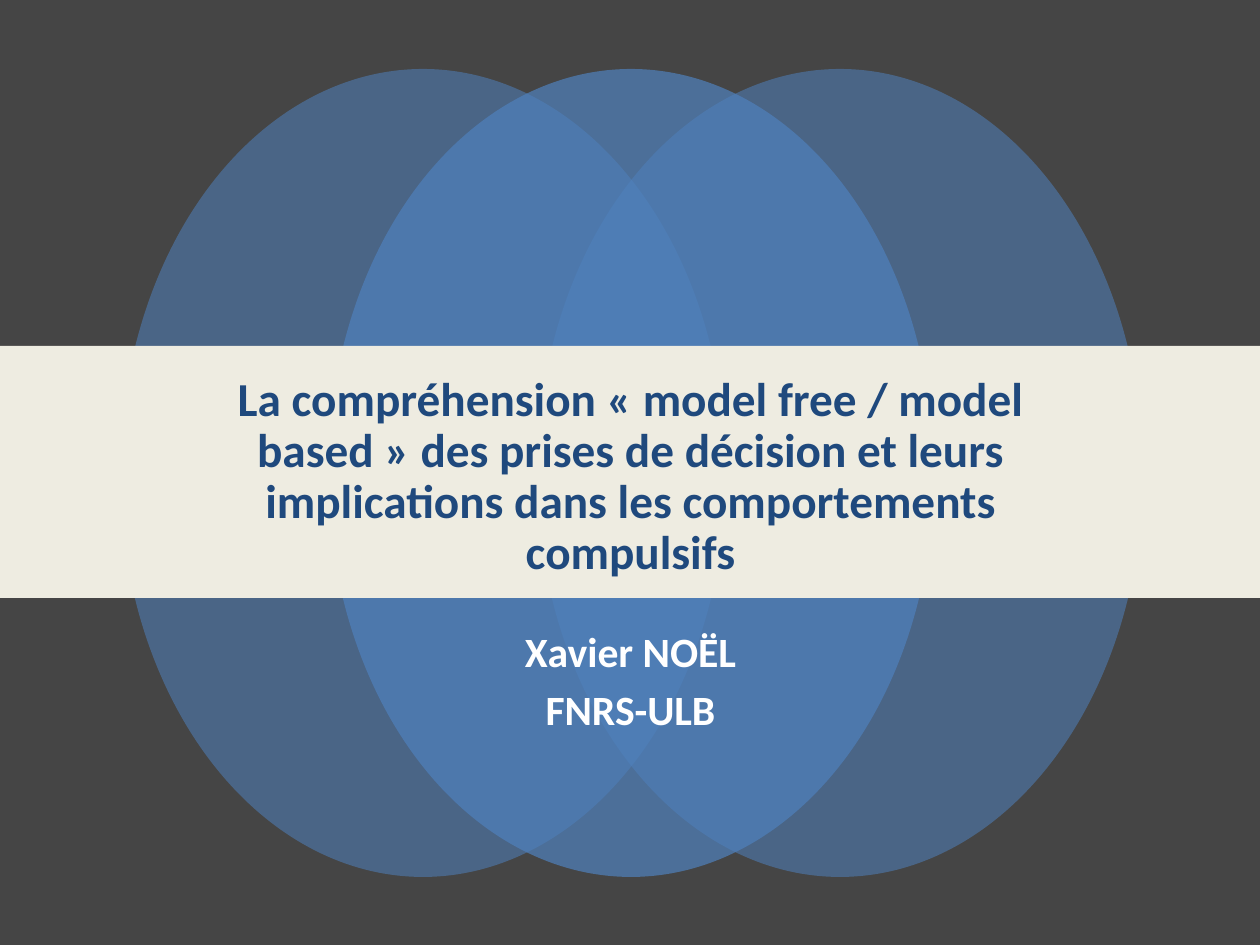
from dataclasses import dataclass

from lxml import etree
from pptx import Presentation
from pptx.dml.color import RGBColor
from pptx.enum.shapes import MSO_SHAPE
from pptx.enum.text import MSO_ANCHOR, MSO_AUTO_SIZE, PP_ALIGN
from pptx.oxml.ns import qn
from pptx.util import Emu, Pt

PX = 914400 // 126
TITLE_ONLY = 5
OVAL, RECTANGLE = MSO_SHAPE.OVAL, MSO_SHAPE.RECTANGLE
MIDDLE, TOP = MSO_ANCHOR.MIDDLE, MSO_ANCHOR.TOP
CENTER = PP_ALIGN.CENTER
NO_AUTOFIT = MSO_AUTO_SIZE.NONE
HARD_SPACE = chr(160)  # keeps the French quotation marks with their words


@dataclass(frozen=True)
class Theme:
    font: str = "Calibri"
    background: RGBColor = RGBColor(0x45, 0x45, 0x45)
    circle: RGBColor = RGBColor(0x4F, 0x81, 0xBD)
    band: RGBColor = RGBColor(0xEE, 0xEC, 0xE1)
    title: RGBColor = RGBColor(0x1F, 0x49, 0x7D)
    author: RGBColor = RGBColor(0xFF, 0xFF, 0xFF)
    title_size: float = 27
    author_size: float = 23.8


theme = Theme()


def add_filled(kind, left, top, width, height, color, opacity=100):
    """Add a borderless shape, with its box in px and its opacity in percent."""
    shape = page.shapes.add_shape(kind, *(Emu(n * PX) for n in (left, top, width, height)))
    shape.shadow.inherit = False
    shape.line.fill.background()
    shape.fill.solid()
    shape.fill.fore_color.rgb = color
    if opacity < 100:
        color_node = shape.fill._xPr.find(".//" + qn("a:srgbClr"))
        etree.SubElement(color_node, qn("a:alpha"), val=str(opacity * 1000))


def write_lines(box, lines, size, color, anchor, line_spacing, space_before):
    """Fill a box with centred bold paragraphs; the space falls between them."""
    frame = box.text_frame
    frame.word_wrap = True
    frame.auto_size = NO_AUTOFIT
    frame.vertical_anchor = anchor
    for index, line in enumerate(lines):
        para = frame.add_paragraph() if index else frame.paragraphs[0]
        para.alignment = CENTER
        para.line_spacing = line_spacing
        para.space_before = Pt(space_before if index else 0)
        span = para.add_run()
        span.text = line
        span.font.name = theme.font
        span.font.size = Pt(size)
        span.font.bold = True
        span.font.color.rgb = color


deck = Presentation()
deck.slide_width, deck.slide_height = Emu(1260 * PX), Emu(945 * PX)
page = deck.slides.add_slide(deck.slide_layouts[TITLE_ONLY])
page.background.fill.solid()
page.background.fill.fore_color.rgb = theme.background

# Outer circles first, so that the middle one lies over both
for left, opacity in ((120, 55), (537, 55), (328, 70)):
    add_filled(OVAL, left, 69, 606, 808, theme.circle, opacity)
add_filled(RECTANGLE, 0, 346, 1260, 252, theme.band)

title = page.shapes.title
title.left, title.top, title.width, title.height = (Emu(n * PX) for n in (158, 383, 945, 190))
page.shapes._spTree.append(title._element)  # bring in front of the band
write_lines(
    title,
    [f"La compréhension «{HARD_SPACE}model free / model based{HARD_SPACE}» des prises "
     "de décision et leurs implications dans les comportements compulsifs"],
    theme.title_size, theme.title, MIDDLE, 0.9, 0,
)

author = page.shapes.add_textbox(*(Emu(n * PX) for n in (158, 620, 945, 105)))
write_lines(author, ["Xavier NOËL", "FNRS-ULB"],
            theme.author_size, theme.author, TOP, 1.0, 4.5)

deck.save("out.pptx")
